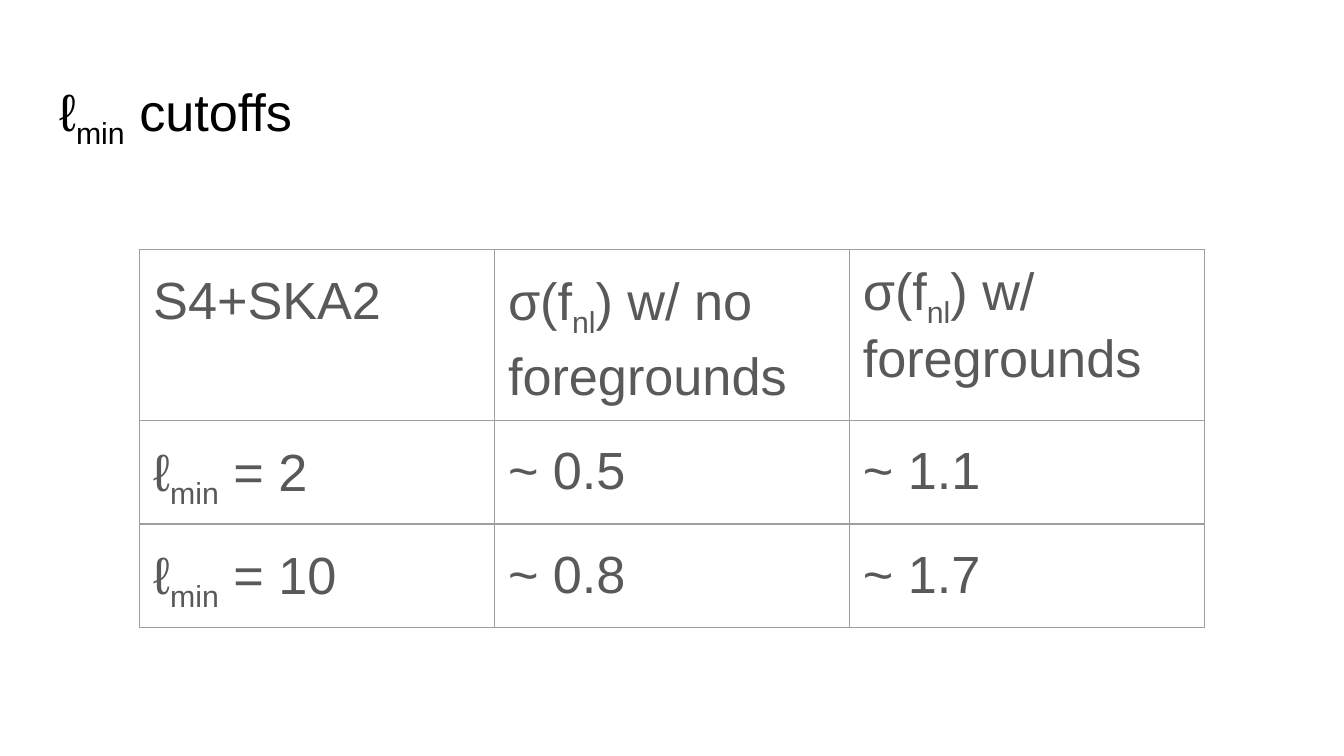
from dataclasses import dataclass

from lxml import etree
from pptx import Presentation
from pptx.dml.color import RGBColor
from pptx.enum.text import MSO_ANCHOR, MSO_AUTO_SIZE, PP_ALIGN
from pptx.oxml.ns import qn
from pptx.util import Inches, Pt

TOP = MSO_ANCHOR.TOP
LEFT = PP_ALIGN.LEFT
NO_AUTOFIT = MSO_AUTO_SIZE.NONE
SLIDE_WIDTH = Inches(10)
SLIDE_HEIGHT = SLIDE_WIDTH * 9 // 16


@dataclass(frozen=True)
class Theme:
    font: str = "Arial"
    size: Pt = Pt(28)
    title: RGBColor = RGBColor(0, 0, 0)
    body: RGBColor = RGBColor(0x59, 0x59, 0x59)
    border: str = "9E9E9E"
    border_width: Pt = Pt(0.75)
    inset: Inches = Inches(0.1)
    line_spacing: float = 1.15
    space_after: Pt = Pt(16)


THEME = Theme()

# Text between underscores is subscript; each cell: text, line spacing, space after
LOOSE = (THEME.line_spacing, THEME.space_after)
CUTOFF_ROWS = [
    [("S4+SKA2", THEME.line_spacing, None),
     ("σ(f_nl_) w/ no foregrounds", *LOOSE),
     ("σ(f_nl_) w/ foregrounds", None, None)],
    [(text, *LOOSE) for text in ("ℓ_min_ = 2", "~ 0.5", "~ 1.1")],
    [(text, *LOOSE) for text in ("ℓ_min_ = 10", "~ 0.8", "~ 1.7")],
]


def percent_box(x, y, width, height):
    """Turn percentages of the slide's size into a box."""
    return (int(x * SLIDE_WIDTH / 100), int(y * SLIDE_HEIGHT / 100),
            int(width * SLIDE_WIDTH / 100), int(height * SLIDE_HEIGHT / 100))


def write_formula(paragraph, text, color):
    for index, part in enumerate(text.split("_")):
        run = paragraph.add_run()
        run.text = part
        if index % 2:
            run.font._element.set("baseline", "-25000")
    paragraph.alignment = LEFT
    paragraph.font.name = THEME.font
    paragraph.font.size = THEME.size
    paragraph.font.color.rgb = color


def set_insets(holder):
    holder.margin_left = holder.margin_right = THEME.inset
    holder.margin_top = holder.margin_bottom = THEME.inset
    holder.vertical_anchor = TOP


def add_borders(cell):
    properties = cell._tc.get_or_add_tcPr()
    for position, side in enumerate(("lnL", "lnR", "lnT", "lnB")):
        line = etree.Element(qn(f"a:{side}"), w=str(THEME.border_width))
        fill = etree.SubElement(line, qn("a:solidFill"))
        etree.SubElement(fill, qn("a:srgbClr"), val=THEME.border)
        properties.insert(position, line)


def place_title(slide, box):
    title = slide.shapes.title
    title.left, title.top, title.width, title.height = box
    frame = title.text_frame
    set_insets(frame)
    frame.word_wrap = True
    frame.auto_size = NO_AUTOFIT
    paragraph = frame.paragraphs[0]
    write_formula(paragraph, "ℓ_min_ cutoffs", THEME.title)
    paragraph.line_spacing = 1.0


def place_cutoff_table(slide, box):
    # Rows start at an equal height and grow with their text
    table = slide.shapes.add_table(len(CUTOFF_ROWS), len(CUTOFF_ROWS[0]), *box).table
    table.first_row = table.horz_banding = False
    for cells, contents in zip(table.rows, CUTOFF_ROWS):
        for cell, (text, line_spacing, space_after) in zip(cells.cells, contents):
            cell.fill.background()
            set_insets(cell)
            add_borders(cell)
            paragraph = cell.text_frame.paragraphs[0]
            paragraph.line_spacing = line_spacing
            paragraph.space_after = space_after
            write_formula(paragraph, text, THEME.body)


def main():
    deck = Presentation()
    deck.slide_width, deck.slide_height = SLIDE_WIDTH, SLIDE_HEIGHT
    slide = deck.slides.add_slide(deck.slide_layouts[5])
    place_title(slide, percent_box(3.4, 8.7, 93.2, 11.2))
    place_cutoff_table(slide, percent_box(10.4, 33.05, 79.2, 22.4))
    deck.save("out.pptx")


if __name__ == "__main__":
    main()
